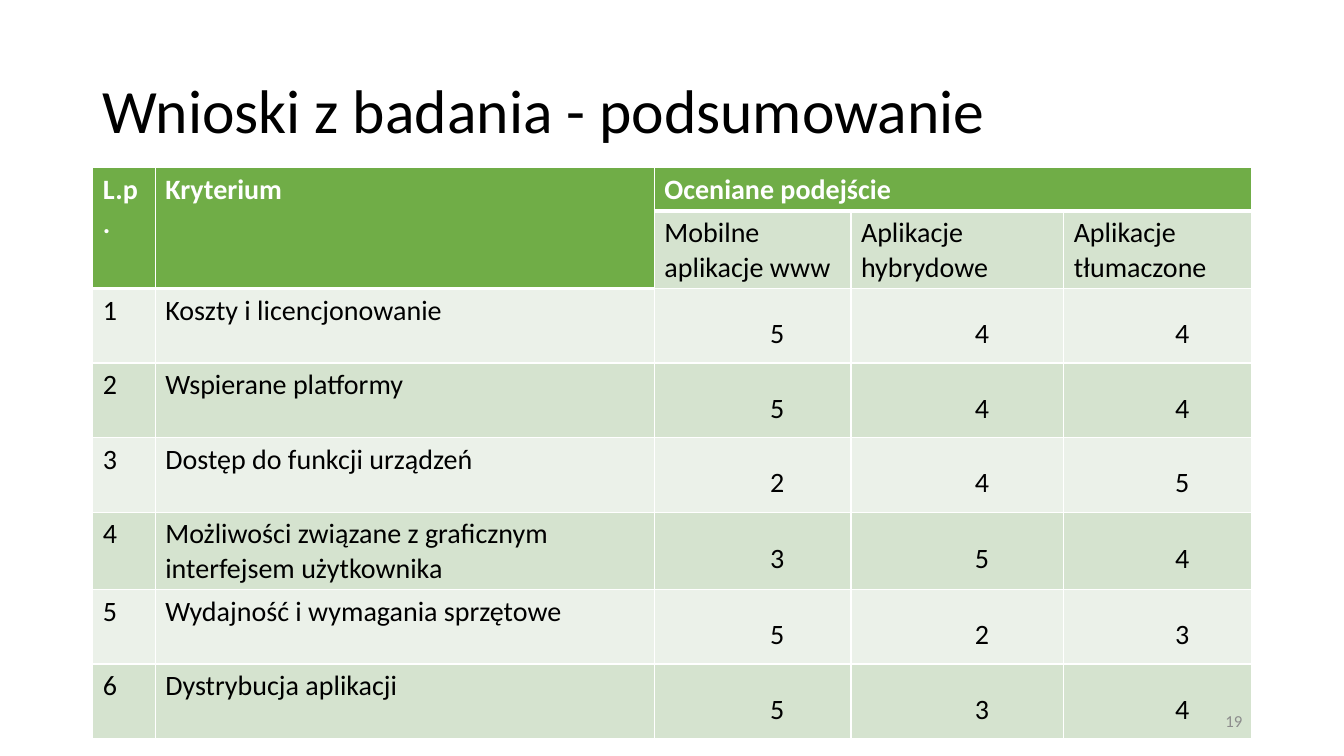
import pptx
import pptx.dml.color
import pptx.enum.text
import pptx.oxml
import pptx.oxml.ns
import pptx.util
from pptx.util import Inches

# Content
TITLE = "Wnioski z badania - podsumowanie"
PAGE_NUMBER = "19"
HEADINGS = ["L.p.", "Kryterium", "Oceniane podejście"]
APPROACHES = ["Mobilne aplikacje www", "Aplikacje hybrydowe", "Aplikacje tłumaczone"]
RATINGS = [
    ("Koszty i licencjonowanie", 5, 4, 4),
    ("Wspierane platformy", 5, 4, 4),
    ("Dostęp do funkcji urządzeń", 2, 4, 5),
    ("Możliwości związane z graficznym interfejsem użytkownika", 3, 5, 4),
    ("Wydajność i wymagania sprzętowe", 5, 2, 3),
    ("Dystrybucja aplikacji", 5, 3, 4),
]

THEME = {
    "font": "Calibri", "title_size": 44, "table_size": 20, "number_size": 12,
    "text": "000000", "number": "8C8C8C", "heading_text": "FFFFFF",
    "heading": "70AD47", "bands": ["D5E3CF", "EBF1E9"],
    "border": "FFFFFF", "thin": 1, "thick": 3,
}

# Layout, in inches
LEFT, TABLE_TOP, WIDTH = 0.92, 1.66, 11.5
COLUMN_WIDTHS = [0.62, 4.95, 1.95, 2.11, 1.86]
HEADING_HEIGHT, RATING_HEIGHT = 0.37, 0.74
HEADING_ROWS, LABEL_COLUMNS = 2, 2
RATING_MARGIN, RATING_INDENT = 0.07, 0.49

ALIGN = pptx.enum.text.PP_ALIGN
MIDDLE = pptx.enum.text.MSO_ANCHOR.MIDDLE


def color(value):
    return pptx.dml.color.RGBColor.from_string(value)


def write(text_frame, text, size, text_color, bold=False):
    text_frame.text = text
    paragraph = text_frame.paragraphs[0]
    for run in paragraph.runs:
        run.font.name = THEME["font"]
        run.font.size = pptx.util.Pt(size)
        run.font.bold = bold
        run.font.color.rgb = color(text_color)
    return paragraph


def add_text(slide, place, text, size, text_color):
    shape = slide.shapes.add_textbox(*(Inches(length) for length in place))
    shape.text_frame.word_wrap = True
    shape.text_frame.vertical_anchor = MIDDLE
    return write(shape.text_frame, text, size, text_color)


def is_heading(row, column):
    return row == 0 or (row == 1 and column < LABEL_COLUMNS)


def add_borders(cell, row, column):
    thick_sides = {"B": is_heading(row, column),
                   "T": row > 0 and is_heading(row - 1, column)}
    properties = cell._tc.get_or_add_tcPr()
    for side in "LRTB":
        points = THEME["thick" if thick_sides.get(side) else "thin"]
        properties.append(pptx.oxml.parse_xml(
            f'<a:ln{side} {pptx.oxml.ns.nsdecls("a")} w="{pptx.util.Pt(points)}">'
            f'<a:solidFill><a:srgbClr val="{THEME["border"]}"/></a:solidFill>'
            f'</a:ln{side}>'))


def format_rating(cell, paragraph):
    cell.vertical_anchor = MIDDLE
    cell.margin_left = cell.margin_right = Inches(RATING_MARGIN)
    cell.margin_top = cell.margin_bottom = 0
    paragraph.alignment = ALIGN.CENTER
    paragraph.line_spacing = 1.5
    paragraph._p.get_or_add_pPr().set("indent", str(Inches(RATING_INDENT)))


def add_ratings_table(slide):
    rows = [HEADINGS + ["", ""], ["", ""] + APPROACHES]
    rows += [[number, *rating] for number, rating in enumerate(RATINGS, 1)]
    heights = [HEADING_HEIGHT] * HEADING_ROWS + [RATING_HEIGHT] * len(RATINGS)
    table = slide.shapes.add_table(
        len(rows), len(COLUMN_WIDTHS), Inches(LEFT), Inches(TABLE_TOP),
        Inches(WIDTH), Inches(sum(heights))).table
    table.first_row = table.horz_banding = False
    for column, width in zip(table.columns, COLUMN_WIDTHS):
        column.width = Inches(width)
    for row, height in zip(table.rows, heights):
        row.height = Inches(height)

    # Cells
    for row, values in enumerate(rows):
        for column, value in enumerate(values):
            cell = table.cell(row, column)
            heading = is_heading(row, column)
            paragraph = write(cell.text_frame, str(value), THEME["table_size"],
                              THEME["heading_text" if heading else "text"], heading)
            if row >= HEADING_ROWS and column >= LABEL_COLUMNS:
                format_rating(cell, paragraph)
            add_borders(cell, row, column)
            cell.fill.solid()
            band = THEME["bands"][(row + 1) % 2]
            cell.fill.fore_color.rgb = color(THEME["heading"] if heading else band)

    # Merged headings
    for column in range(LABEL_COLUMNS):
        table.cell(0, column).merge(table.cell(HEADING_ROWS - 1, column))
    table.cell(0, LABEL_COLUMNS).merge(table.cell(0, len(COLUMN_WIDTHS) - 1))


def main():
    presentation = pptx.Presentation()
    presentation.slide_width = Inches(13.33)
    presentation.slide_height = Inches(7.5)
    slide = presentation.slides.add_slide(presentation.slide_layouts[6])

    # Title, table and page number
    title = add_text(slide, (LEFT, 0.4, WIDTH, 1.45), TITLE,
                     THEME["title_size"], THEME["text"])
    title.line_spacing = 0.9
    add_ratings_table(slide)
    number = add_text(slide, (9.42, 6.95, 3, 0.4), PAGE_NUMBER,
                      THEME["number_size"], THEME["number"])
    number.alignment = ALIGN.RIGHT
    presentation.save("out.pptx")


if __name__ == "__main__":
    main()
